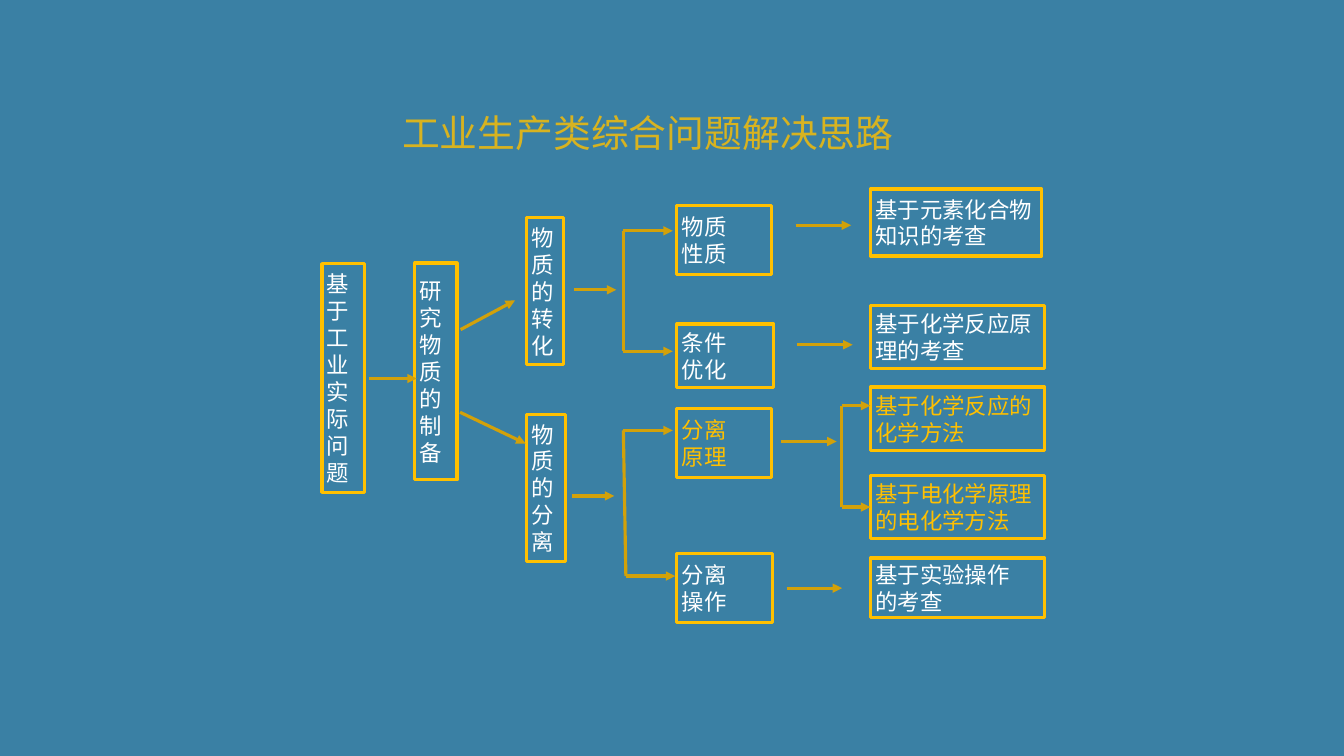
from dataclasses import dataclass

from lxml.etree import SubElement
from pptx import Presentation
from pptx.dml.color import RGBColor
from pptx.enum.shapes import MSO_CONNECTOR, MSO_SHAPE
from pptx.enum.text import MSO_ANCHOR, PP_ALIGN
from pptx.oxml.ns import qn
from pptx.util import Emu, Inches, Pt

COLS, ROWS = 26.67, 15
CELL = Inches(1)
FONT = "Noto Sans CJK SC"
BLUE, GOLD, OCHRE, WHITE = "3A80A4", "FFC000", "D2A10A", "FFFFFF"
STROKE = Pt(4.5)

# Left edges of the five stages, in grid columns
CAUSE, STUDY, SPLIT, TOPIC, EXAM = 6.39, 8.23, 10.45, 13.43, 17.27


@dataclass
class Box:
    text: str
    col: float
    row: float
    wide: float
    high: float
    ink: str = WHITE


@dataclass
class Arrow:
    col: float
    row: float
    run: float
    rise: float = 0


@dataclass
class Fork:
    col: float
    top: float
    foot: float
    run: float
    lean: float = 0


BOXES = [
    Box("基于工业实际问题", CAUSE, 5.23, 0.84, 4.54),
    Box("研究物质的制备", STUDY, 5.22, 0.84, 4.3),
    Box("物质的转化", SPLIT, 4.32, 0.73, 2.92),
    Box("物质的分离", SPLIT, 8.22, 0.78, 2.92),
    Box("物质\n性质", TOPIC, 4.07, 1.88, 1.37),
    Box("条件\n优化", TOPIC, 6.43, 1.92, 1.26),
    Box("分离\n原理", TOPIC, 8.1, 1.88, 1.37, GOLD),
    Box("分离\n操作", TOPIC, 10.98, 1.9, 1.37),
    Box("基于元素化合物知识的考查", EXAM, 3.75, 3.4, 1.33),
    Box("基于化学反应原理的考查", EXAM, 6.06, 3.46, 1.26),
    Box("基于化学反应的化学方法", EXAM, 7.68, 3.46, 1.26, GOLD),
    Box("基于电化学原理的电化学方法", EXAM, 9.43, 3.46, 1.26, GOLD),
    Box("基于实验操作\n的考查", EXAM, 11.07, 3.46, 1.19),
]
ARROWS = [
    Arrow(7.33, 7.51, 0.94),
    Arrow(9.14, 6.54, 1.08, -0.58),
    Arrow(9.13, 8.18, 1.3, 0.62),
    Arrow(11.39, 5.75, 0.84),
    Arrow(11.35, 9.84, 0.84),
    Arrow(15.79, 4.47, 1.1),
    Arrow(15.82, 6.84, 1.1),
    Arrow(15.5, 8.76, 1.1),
    Arrow(15.61, 11.67, 1.1),
]
FORKS = [
    Fork(12.37, 4.58, 6.97, 0.98),
    Fork(12.37, 8.54, 11.43, 0.98, 0.05),
    Fork(16.7, 8.05, 10.06, 0.57),
]


def grid(*cells: float) -> list[Emu]:
    return [Emu(round(n * CELL)) for n in cells]


def paint(color, code: str) -> None:
    color.rgb = RGBColor.from_string(code)


def write(frame, text: str, size: float, ink: str, align) -> None:
    frame.word_wrap = True
    frame.vertical_anchor = MSO_ANCHOR.MIDDLE
    for i, line in enumerate(text.split("\n")):
        para = frame.paragraphs[0] if i == 0 else frame.add_paragraph()
        para.alignment = align
        para.line_spacing = Pt(size * 1.2)
        run = para.add_run()
        run.text = line
        run.font.size = Pt(size)
        run.font.name = FONT
        paint(run.font.color, ink)
        SubElement(run.font._element, qn("a:ea"), typeface=FONT)


def draw_box(slide, box: Box) -> None:
    shape = slide.shapes.add_shape(
        MSO_SHAPE.RECTANGLE, *grid(box.col, box.row, box.wide, box.high))
    shape.shadow.inherit = False
    shape.fill.background()
    shape.line.width = STROKE
    paint(shape.line.color, GOLD)
    write(shape.text_frame, box.text, 32, box.ink, PP_ALIGN.LEFT)


def draw_line(slide, part: Arrow, head: bool = True) -> None:
    ends = grid(part.col, part.row, part.col + part.run, part.row + part.rise)
    line = slide.shapes.add_connector(MSO_CONNECTOR.STRAIGHT, *ends)
    line.line.width = STROKE
    paint(line.line.color, OCHRE)
    if head:
        SubElement(line.line._get_or_add_ln(), qn("a:tailEnd"), type="triangle")
    SubElement(line._element.spPr, qn("a:effectLst"))


def draw_fork(slide, fork: Fork) -> None:
    """Draw a spine with an arrow leaving from each of its ends."""
    drop = fork.foot - fork.top
    draw_line(slide, Arrow(fork.col, fork.top, fork.lean, drop), head=False)
    draw_line(slide, Arrow(fork.col, fork.top, fork.run))
    draw_line(slide, Arrow(fork.col + fork.lean, fork.foot, fork.run))


def draw_title(slide, text: str) -> None:
    frame = slide.shapes.add_textbox(*grid(5.17, 2.12, 15.37, 1.02)).text_frame
    frame.margin_left = frame.margin_right = Inches(0.06)
    frame.margin_top = frame.margin_bottom = Inches(0.06)
    write(frame, text, 54, GOLD, PP_ALIGN.CENTER)
    for tint in frame._txBody.iter(qn("a:srgbClr")):
        SubElement(tint, qn("a:alpha"), val="80000")


def main() -> None:
    deck = Presentation()
    deck.slide_width, deck.slide_height = grid(COLS, ROWS)
    slide = deck.slides.add_slide(deck.slide_layouts[6])
    slide.background.fill.solid()
    paint(slide.background.fill.fore_color, BLUE)
    draw_title(slide, "工业生产类综合问题解决思路")
    for box in BOXES:
        draw_box(slide, box)
    for arrow in ARROWS:
        draw_line(slide, arrow)
    for fork in FORKS:
        draw_fork(slide, fork)
    deck.save("out.pptx")


if __name__ == "__main__":
    main()
